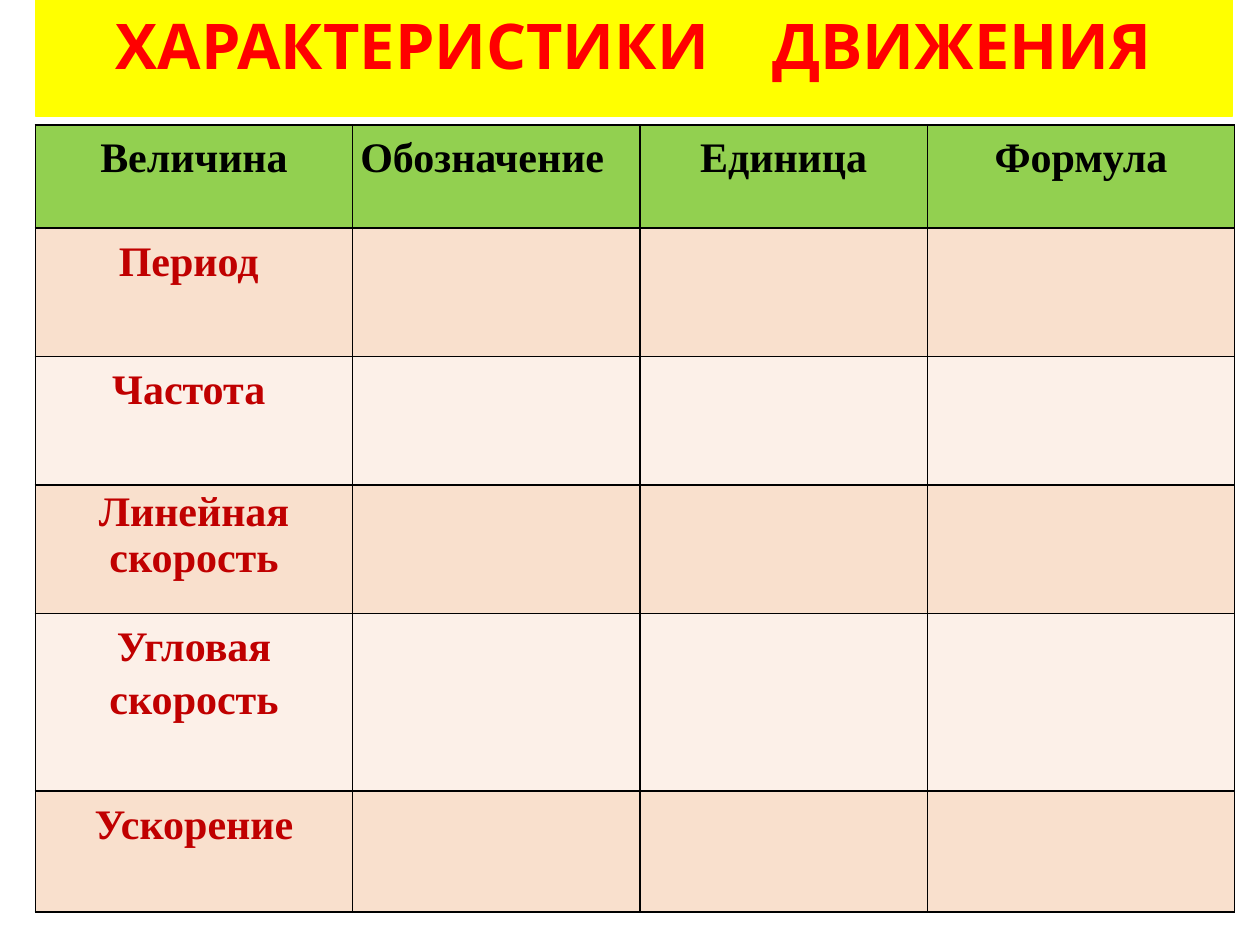
from lxml.etree import SubElement
from pptx import Presentation
from pptx.dml.color import RGBColor
from pptx.enum.text import MSO_ANCHOR, MSO_AUTO_SIZE, PP_ALIGN
from pptx.oxml.ns import qn
from pptx.util import Inches, Pt

HEADS = ["Величина", "Обозначение", "Единица", "Формула"]
NAMES = ["Период ", "Частота ", "Линейная скорость", "Угловая скорость", "Ускорение"]
WIDTHS = [2.52, 2.28, 2.28, 2.44]
HEIGHTS = [0.82, 1.02, 1.02, 1.02, 1.41, 0.96]
BANDS = ["F9E0CD", "FCF0E8"]


def paint(fill, color):
    fill.solid()
    fill.fore_color.rgb = RGBColor.from_string(color)


def write(para, text, font, size, color):
    run = para.add_run()
    run.text = text
    run.font.name = font
    run.font.size = Pt(size)
    run.font.bold = True
    run.font.color.rgb = RGBColor.from_string(color)
    return run


def border(cell):
    props = cell._tc.get_or_add_tcPr()
    for spot, side in enumerate(["lnL", "lnR", "lnT", "lnB"]):
        line = props.makeelement(qn(f"a:{side}"), {"w": str(Pt(1))})
        fill = SubElement(line, qn("a:solidFill"))
        SubElement(fill, qn("a:srgbClr"), val="000000")
        props.insert(spot, line)


def add_title(slide, left, top, width, height):
    title = slide.shapes.title
    title.left, title.top = Inches(left), Inches(top)
    title.width, title.height = Inches(width), Inches(height)
    paint(title.fill, "FFFF00")
    paint(title.line.fill, "FFFF00")
    title.line.width = Pt(0.75)
    frame = title.text_frame
    frame.word_wrap = True
    frame.auto_size = MSO_AUTO_SIZE.NONE
    frame.vertical_anchor = MSO_ANCHOR.TOP
    para = frame.paragraphs[0]
    para.alignment = PP_ALIGN.CENTER
    style = ("Cabin", 36, "FF0000")
    write(para, "ХАРАКТЕРИСТИКИ", *style)
    gap = write(para, " ", *style)
    gap.font._element.set("spc", "2800")
    write(para, "ДВИЖЕНИЯ", *style)


def add_grid(slide, left, top, width, height):
    table = slide.shapes.add_table(
        len(HEIGHTS), len(WIDTHS),
        Inches(left), Inches(top), Inches(width), Inches(height)).table
    for col, size in zip(table.columns, WIDTHS):
        col.width = Inches(size)
    for row, size in zip(table.rows, HEIGHTS):
        row.height = Inches(size)
    rows = [HEADS] + [[name, "", "", ""] for name in NAMES]
    for r, texts in enumerate(rows):
        for c, text in enumerate(texts):
            cell = table.cell(r, c)
            paint(cell.fill, BANDS[(r - 1) % 2] if r else "92D050")
            border(cell)
            if not text:
                continue
            cell.margin_left = cell.margin_right = Inches(0.06)
            cell.margin_top = cell.margin_bottom = Inches(0.03)
            para = cell.text_frame.paragraphs[0]
            para.alignment = PP_ALIGN.LEFT if text == "Обозначение" else PP_ALIGN.CENTER
            para.line_spacing = 1.0 if text.startswith("Линейная") else 1.15
            if r == 0:
                para.space_after = Pt(10)
            write(para, text, "Times New Roman", 24, "C00000" if r else "000000")


def main():
    deck = Presentation()
    deck.slide_width, deck.slide_height = Inches(10), Inches(7.5)
    slide = deck.slides.add_slide(deck.slide_layouts[5])
    add_grid(slide, 0.28, 0.99, sum(WIDTHS), sum(HEIGHTS))
    add_title(slide, 0.28, 0, 9.5, 0.92)
    deck.save("out.pptx")


if __name__ == "__main__":
    main()
